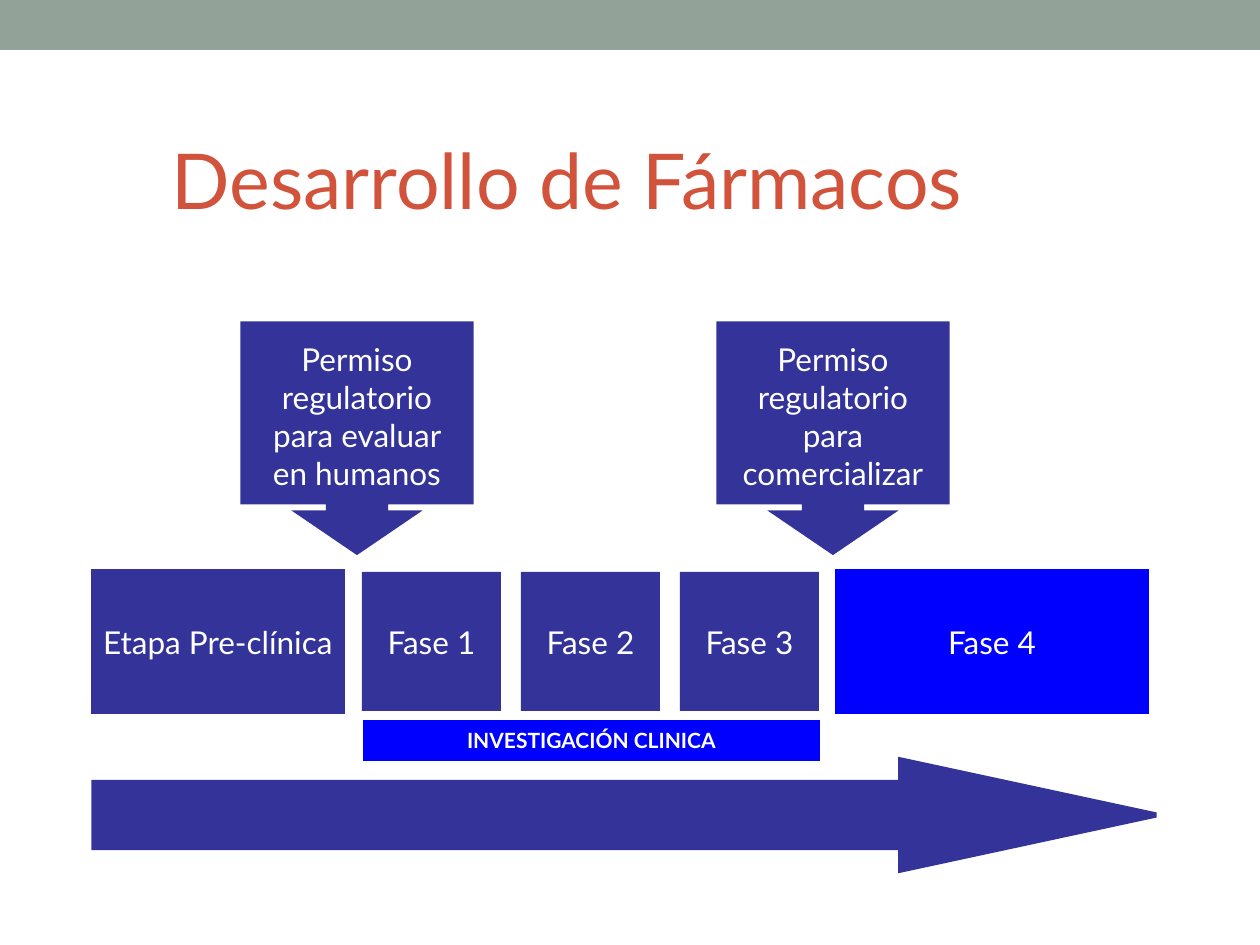
"""Build the drug development slide: phases, permits and timeline."""
from lxml import etree
from pptx import Presentation
from pptx.dml.color import RGBColor
from pptx.enum.shapes import MSO_SHAPE
from pptx.enum.text import MSO_ANCHOR, PP_ALIGN
from pptx.oxml.ns import qn
from pptx.util import Pt

RECTANGLE = MSO_SHAPE.RECTANGLE
RIGHT_ARROW = MSO_SHAPE.RIGHT_ARROW
CALLOUT = MSO_SHAPE.DOWN_ARROW_CALLOUT
TOP, MIDDLE, BOTTOM = MSO_ANCHOR.TOP, MSO_ANCHOR.MIDDLE, MSO_ANCHOR.BOTTOM
LEFT, CENTER = PP_ALIGN.LEFT, PP_ALIGN.CENTER

PX = 914400 / 126
THEME = {
    "font": "Lato",
    "band": RGBColor.from_string("93A299"),
    "title": RGBColor.from_string("D2533C"),
    "indigo": RGBColor.from_string("333399"),
    "blue": RGBColor.from_string("0000FF"),
    "white": RGBColor.from_string("FFFFFF"),
    "title_size": Pt(44),
    "body_size": Pt(18),
    "label_size": Pt(12),
    "thick": Pt(3),
    "thin": Pt(0.75),
}


def write(shape, text, size="body_size", color="white", anchor=MIDDLE, align=CENTER, wrap=True, bold=False):
    frame = shape.text_frame
    paragraph = frame.paragraphs[0]
    run = paragraph.add_run()
    run.text = text
    run.font.color.rgb = THEME[color]
    formats = (
        (frame, {"word_wrap": wrap, "vertical_anchor": anchor}),
        (paragraph, {"alignment": align}),
        (run.font, {"name": THEME["font"], "size": THEME[size], "bold": bold}),
    )
    for target, values in formats:
        for name, value in values.items():
            setattr(target, name, value)


def draw(shapes, kind, box, color, line=None, adjustments=()):
    shape = shapes.add_shape(kind, *(round(length * PX) for length in box))
    shape.shadow.inherit = False
    shape.fill.solid()
    shape.fill.fore_color.rgb = THEME[color]
    if line:
        shape.line.color.rgb = THEME[color]
        shape.line.width = THEME[line]
        outline = shape._element.spPr.find(qn("a:ln"))
        etree.SubElement(outline, qn("a:miter"), lim="800000")
    else:
        shape.line.fill.background()
    for index, value in enumerate(adjustments):
        shape.adjustments[index] = value
    return shape


presentation = Presentation()
presentation.slide_width = round(1260 * PX)
presentation.slide_height = round(945 * PX)
slide = presentation.slides.add_slide(presentation.slide_layouts[6])

draw(slide.shapes, RECTANGLE, (0, 0, 1260, 50), "band")
title = slide.shapes.add_textbox(*(round(length * PX) for length in (159, 29, 1074, 202)))
write(title, "Desarrollo de Fármacos", "title_size", "title", BOTTOM, LEFT)

stages = [("Etapa Pre-clínica", 94, 248, "indigo", "thick")]
stages += [(f"Fase {number}", 203 + 159 * number, 139, "indigo", None) for number in (1, 2, 3)]
stages += [("Fase 4", 838, 308, "blue", "thick")]
for text, left, width, color, line in stages:
    stage = draw(slide.shapes, RECTANGLE, (left, 572, width, 139), color, line)
    write(stage, text, wrap=False)

draw(slide.shapes, RIGHT_ARROW, (94, 760, 1062, 110), "indigo", "thick", (0.59, 2.32))

permits = (
    (243, "Permiso regulatorio para evaluar en humanos"),
    (719, "Permiso regulatorio para comercializar"),
)
for left, text in permits:
    group = slide.shapes.add_group_shape()
    draw(group.shapes, CALLOUT, (left, 324, 228, 228), "indigo", "thick", (0.25, 0.25, 0.17, 0.78))
    permit = draw(group.shapes, RECTANGLE, (left, 334, 228, 165), "indigo", "thin")
    write(permit, text, anchor=TOP)

research = draw(slide.shapes, RECTANGLE, (364, 721, 455, 39), "blue", "thin")
write(research, "INVESTIGACIÓN CLINICA", "label_size", anchor=TOP, bold=True)

presentation.save("out.pptx")
